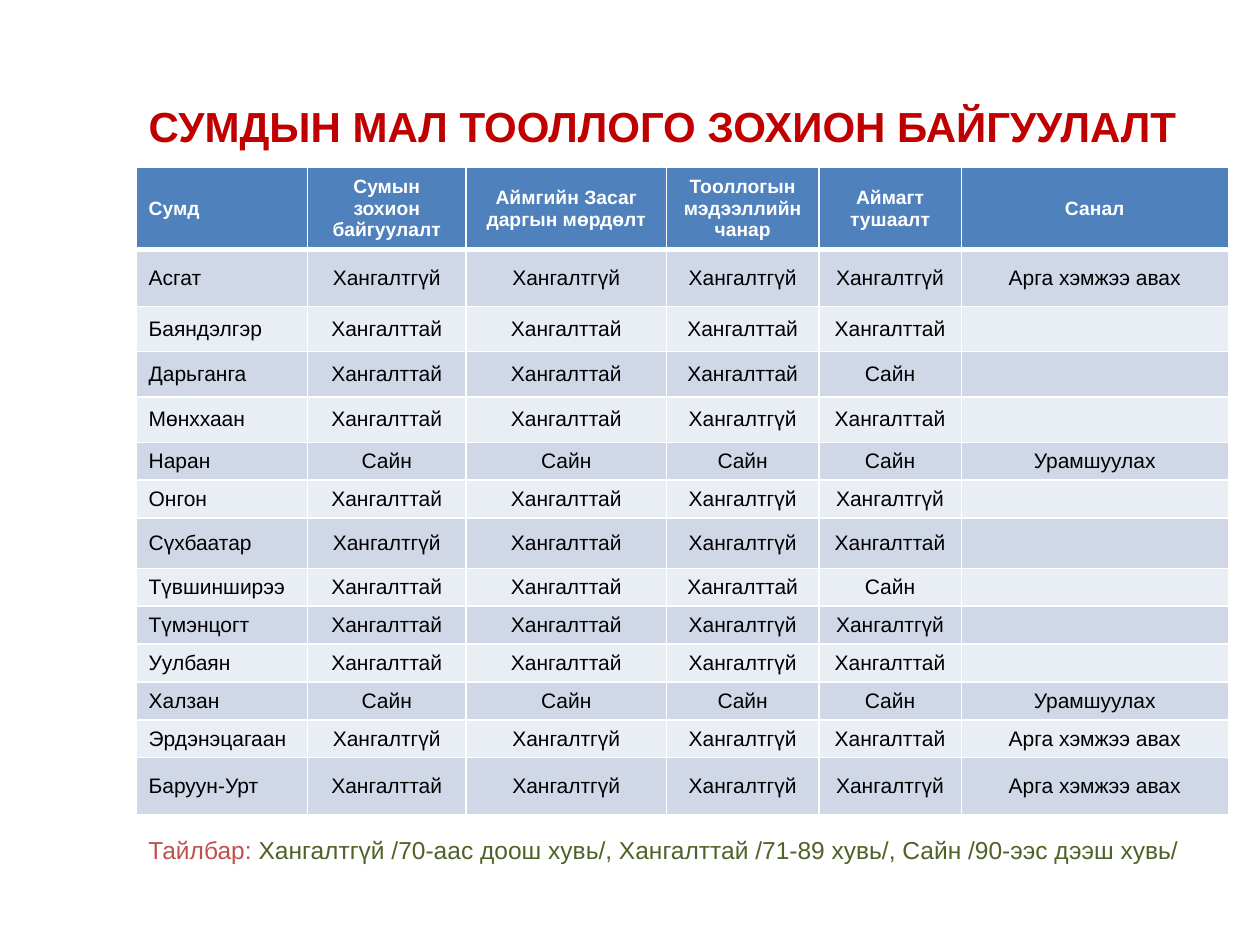
from dataclasses import dataclass

from pptx import Presentation
from pptx.dml.color import RGBColor as Rgb
from pptx.enum.text import MSO_ANCHOR as Anchor, MSO_AUTO_SIZE as AutoSize, PP_ALIGN as Align
from pptx.oxml.xmlchemy import OxmlElement
from pptx.util import Inches, Pt


@dataclass(frozen=True)
class Theme:
    font: str = "Arial"
    title: str = "C00000"
    header: str = "4F81BD"
    bands: tuple = ("D0D8E8", "E9EDF4")
    light: str = "FFFFFF"
    ink: str = "000000"
    note_label: str = "C0504D"
    note: str = "4F6228"
    title_size: int = 24
    header_size: int = 11
    body_size: int = 12
    note_size: int = 14


WIDTH, HEIGHT = 10, 7.5
LEFT = 0.108  # shared left edge, as a share of the width

# Survey results by district
POOR, FAIR, GOOD = "Хангалтгүй", "Хангалттай", "Сайн"
ACT, REWARD = "Арга хэмжээ авах", "Урамшуулах"
HEADERS = ["Сумд", "Сумын зохион байгуулалт", "Аймгийн Засаг даргын мөрдөлт",
           "Тооллогын мэдээллийн чанар", "Аймагт тушаалт", "Санал"]
DISTRICTS = [
    ("Асгат", POOR, POOR, POOR, POOR, ACT),
    ("Баяндэлгэр", FAIR, FAIR, FAIR, FAIR, ""),
    ("Дарьганга", FAIR, FAIR, FAIR, GOOD, ""),
    ("Мөнххаан", FAIR, FAIR, POOR, FAIR, ""),
    ("Наран", GOOD, GOOD, GOOD, GOOD, REWARD),
    ("Онгон", FAIR, FAIR, POOR, POOR, ""),
    ("Сүхбаатар", POOR, FAIR, POOR, FAIR, ""),
    ("Түвшинширээ", FAIR, FAIR, FAIR, GOOD, ""),
    ("Түмэнцогт", FAIR, FAIR, POOR, POOR, ""),
    ("Уулбаян", FAIR, FAIR, POOR, FAIR, ""),
    ("Халзан", GOOD, GOOD, GOOD, GOOD, REWARD),
    ("Эрдэнэцагаан", POOR, POOR, POOR, FAIR, ACT),
    ("Баруун-Урт", FAIR, POOR, POOR, POOR, ACT),
]
COLUMN_WIDTHS = [1.36, 1.26, 1.59, 1.21, 1.13, 2.12]
ROW_HEIGHTS = [0.64, 0.45] + [0.36] * 3 + [0.3] * 2 + [0.4] + [0.3] * 5 + [0.45]


class Builder:
    def __init__(self, presentation, theme):
        self.theme = theme
        self.slide = presentation.slides.add_slide(presentation.slide_layouts[5])

    def box(self, left, top, width, height):
        """Turn shares of the slide's size into lengths."""
        return (Inches(left * WIDTH), Inches(top * HEIGHT),
                Inches(width * WIDTH), Inches(height * HEIGHT))

    def style(self, run, size, color, bold=False):
        run.font.name = self.theme.font
        run.font.size = Pt(size)
        run.font.bold = bold
        run.font.color.rgb = Rgb.from_string(color)

    def frame(self, shape):
        frame = shape.text_frame
        frame.word_wrap = True
        frame.auto_size = AutoSize.SHAPE_TO_FIT_TEXT
        frame.vertical_anchor = Anchor.TOP
        return frame

    def title(self, text, *shares):
        heading = self.slide.shapes.title
        heading.left, heading.top, heading.width, heading.height = self.box(*shares)
        frame = self.frame(heading)
        frame.text = text
        paragraph = frame.paragraphs[0]
        paragraph.alignment = Align.JUSTIFY
        self.style(paragraph.runs[0], self.theme.title_size, self.theme.title, True)

    def note(self, parts, *shares):
        paragraph = self.frame(self.slide.shapes.add_textbox(*self.box(*shares))).paragraphs[0]
        paragraph.alignment = Align.JUSTIFY
        for text, color in parts:
            run = paragraph.add_run()
            run.text = text
            self.style(run, self.theme.note_size, color)

    def borders(self, cell, bottom):
        properties = cell._tc.get_or_add_tcPr()
        for index, (side, width) in enumerate(
                (("lnL", 1), ("lnR", 1), ("lnT", 1), ("lnB", bottom))):
            line = OxmlElement(f"a:{side}")
            line.set("w", str(Pt(width)))
            fill = OxmlElement("a:solidFill")
            color = OxmlElement("a:srgbClr")
            color.set("val", self.theme.light)
            fill.append(color)
            line.append(fill)
            properties.insert(index, line)

    def cell(self, cell, text, column, is_header, fill):
        theme = self.theme
        size = theme.header_size if is_header else theme.body_size
        cell.fill.solid()
        cell.fill.fore_color.rgb = Rgb.from_string(fill)
        cell.vertical_anchor = Anchor.MIDDLE
        cell.text_frame.text = text
        paragraph = cell.text_frame.paragraphs[0]
        paragraph.alignment = Align.CENTER if column else Align.LEFT
        for run in paragraph.runs:
            self.style(run, size, theme.light if is_header else theme.ink, is_header)
        # Empty cells need a text size too, or they stretch their row
        if not text:
            end = OxmlElement("a:endParaRPr")
            end.set("sz", str(size * 100))
            paragraph._p.append(end)
        self.borders(cell, 3 if is_header else 1)

    def table(self, rows, widths, heights, left, top):
        shares = (left, top, sum(widths) / WIDTH, sum(heights) / HEIGHT)
        table = self.slide.shapes.add_table(len(rows), len(widths), *self.box(*shares)).table
        for column, width in zip(table.columns, widths):
            column.width = Inches(width)
        for index, (values, height) in enumerate(zip(rows, heights)):
            table.rows[index].height = Inches(height)
            fill = self.theme.bands[(index - 1) % 2] if index else self.theme.header
            for column, text in enumerate(values):
                self.cell(table.cell(index, column), text, column, index == 0, fill)


def main():
    presentation = Presentation()
    presentation.slide_width, presentation.slide_height = Inches(WIDTH), Inches(HEIGHT)
    theme = Theme()
    builder = Builder(presentation, theme)

    # Heading
    builder.title("СУМДЫН МАЛ ТООЛЛОГО ЗОХИОН БАЙГУУЛАЛТ", LEFT, 0.1, 0.85, 0.07)

    # Ratings table
    builder.table([HEADERS, *DISTRICTS], COLUMN_WIDTHS, ROW_HEIGHTS, LEFT, 1.33 / HEIGHT)

    # Explanation of the ratings
    builder.note([
        ("Тайлбар: ", theme.note_label),
        (f"{POOR} /70-аас доош хувь/, {FAIR} /71-89 хувь/, {GOOD} /90-ээс дээш хувь/", theme.note),
    ], LEFT, 6.58 / HEIGHT, 0.875, 0.34 / HEIGHT)

    presentation.save("out.pptx")


if __name__ == "__main__":
    main()
